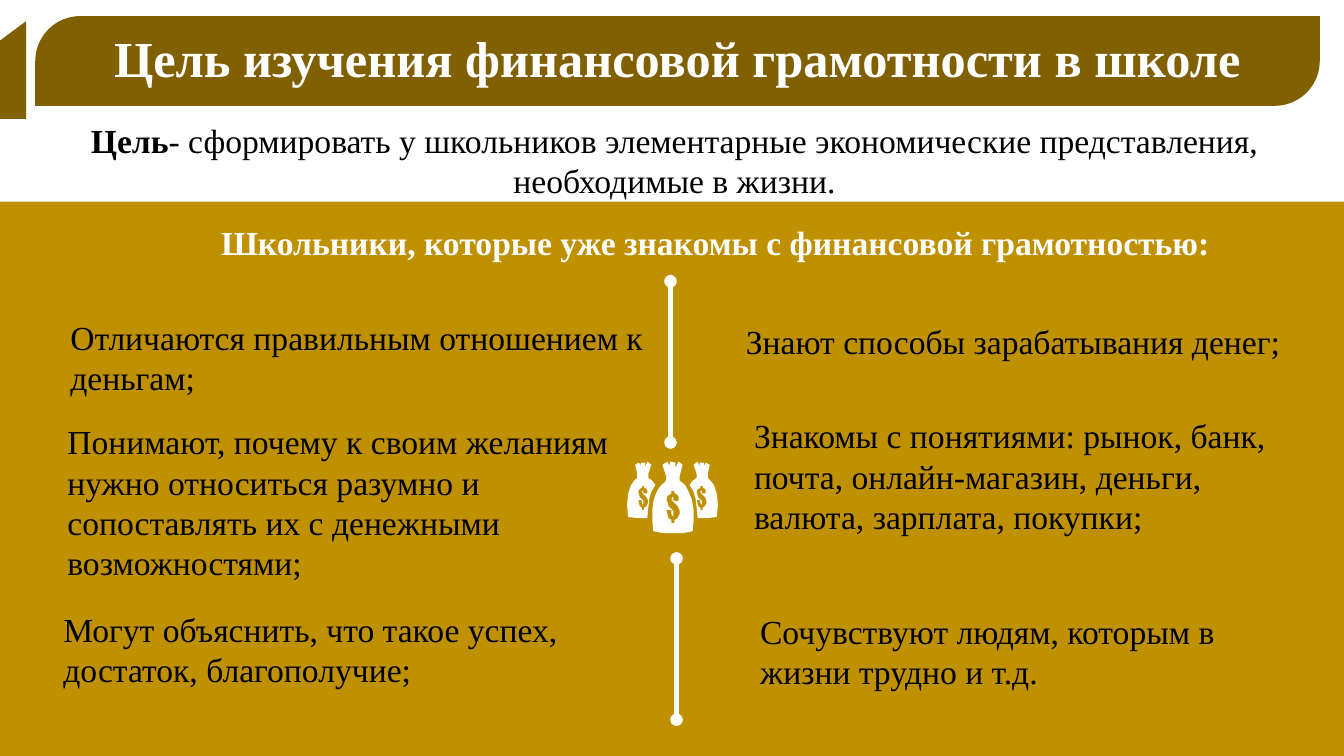
from lxml import etree
from pptx import Presentation
from pptx.dml.color import RGBColor
from pptx.enum.shapes import MSO_CONNECTOR as CONNECTOR, MSO_SHAPE as SHAPE
from pptx.enum.text import MSO_ANCHOR as ANCHOR, PP_ALIGN as ALIGN
from pptx.oxml.ns import qn
from pptx.util import Inches, Pt

BROWN = RGBColor(0x80, 0x60, 0x00)
GOLD = RGBColor(0xBF, 0x90, 0x00)
WHITE = RGBColor(0xFF, 0xFF, 0xFF)
BLACK = RGBColor(0x00, 0x00, 0x00)

prs = Presentation()
prs.slide_width, prs.slide_height = Inches(13.33), Inches(7.5)
slide = prs.slides.add_slide(prs.slide_layouts[6])
shapes = slide.shapes


def paint(shape, color):
    shape.shadow.inherit = False
    shape.fill.solid()
    shape.fill.fore_color.rgb = color
    shape.line.fill.background()


def write(frame, runs, align, color=BLACK, size=24):
    """Fill the frame with one paragraph of (text, bold) runs."""
    frame.word_wrap = True
    paragraph = frame.paragraphs[0]
    paragraph.alignment = align
    for text, bold in runs:
        run = paragraph.add_run()
        run.text = text
        run.font.color.rgb = color
        formats = {"name": "Times New Roman", "size": Pt(size), "bold": bold}
        for key, value in formats.items():
            setattr(run.font, key, value)


# Title bar, lower panel and corner tab
bands = []
for kind, box, color in [
    (SHAPE.ROUND_2_DIAG_RECTANGLE, (0.35, 0.16, 12.74, 0.89), BROWN),
    (SHAPE.RECTANGLE, (0, 2, 13.33, 5.5), GOLD),
    (SHAPE.FLOWCHART_MANUAL_INPUT, (0, 0.21, 0.26, 0.97), BROWN),
]:
    band = shapes.add_shape(kind, *map(Inches, box))
    paint(band, color)
    bands.append(band)

title = bands[0]
title.adjustments[0] = 0.5
title.adjustments[1] = 0
title.text_frame.vertical_anchor = ANCHOR.MIDDLE
write(title.text_frame, [("Цель изучения финансовой грамотности в школе", True)],
      ALIGN.CENTER, WHITE, 36)
title.text_frame.paragraphs[0].line_spacing = 0.9

# Goal, subheading and the two columns of statements
for box, runs, align, color in [
    ((0.38, 1.14, 12.62, 0.91),
     [("Цель", True),
      ("- сформировать у школьников элементарные экономические представления, "
       "необходимые в жизни.", False)], ALIGN.CENTER, BLACK),
    ((1.46, 2.15, 11.27, 0.91),
     [("Школьники, которые уже знакомы с финансовой грамотностью:", True)],
     ALIGN.CENTER, WHITE),
    ((0.6, 3.09, 5.94, 1.25),
     [("Отличаются правильным отношением к деньгам;", False)], ALIGN.LEFT, BLACK),
    ((0.57, 4.13, 6.07, 1.72),
     [("Понимают, почему к своим желаниям нужно относиться разумно и "
       "сопоставлять их с денежными возможностями;", False)], ALIGN.LEFT, BLACK),
    ((0.53, 5.99, 6.04, 1.25),
     [("Могут объяснить, что такое успех, достаток, благополучие;", False)],
     ALIGN.LEFT, BLACK),
    ((7.3, 3.13, 5.87, 0.5),
     [("Знают способы зарабатывания денег;", False)], ALIGN.LEFT, BLACK),
    ((7.38, 4.07, 5.68, 1.72),
     [("Знакомы с понятиями: рынок, банк, почта, онлайн-магазин, деньги, "
       "валюта, зарплата, покупки;", False)], ALIGN.LEFT, BLACK),
    ((7.44, 6.01, 5.61, 1.25),
     [("Сочувствуют людям, которым в жизни трудно и т.д.", False)],
     ALIGN.LEFT, BLACK),
]:
    write(shapes.add_textbox(*map(Inches, box)).text_frame, runs, align, color)

# Divider above and below the money bags
for x, top in [(6.65, 2.79), (6.71, 5.54)]:
    divider = shapes.add_connector(
        CONNECTOR.STRAIGHT, Inches(x), Inches(top), Inches(x), Inches(top + 1.6))
    divider.line.color.rgb = WHITE
    divider.line.width = Pt(3)
    for end in ("a:headEnd", "a:tailEnd"):
        etree.SubElement(divider.line._get_or_add_ln(), qn(end), type="oval")
    etree.SubElement(divider._element.spPr, qn("a:effectLst"))

# Money bags: side bags mirror each other, one dollar sign serves all three
left_bag = [
    (6.43, 4.74), (6.47, 4.77), (6.5, 4.81), (6.46, 4.88), (6.44, 4.95),
    (6.43, 5.04), (6.42, 5.14), (6.33, 5.14), (6.23, 5.13), (6.22, 5.01),
    (6.23, 4.9), (6.26, 4.81), (6.29, 4.77), (6.32, 4.74), (6.32, 4.7),
    (6.3, 4.61), (6.34, 4.59), (6.35, 4.62), (6.36, 4.59), (6.4, 4.59),
    (6.4, 4.63), (6.42, 4.58), (6.46, 4.61), (6.43, 4.7),
]
right_bag = [(13.34 - x, y) for x, y in left_bag]
front_bag = [
    (6.74, 4.77), (6.74, 4.73), (6.77, 4.61), (6.73, 4.58), (6.7, 4.64),
    (6.7, 4.59), (6.65, 4.58), (6.64, 4.62), (6.62, 4.58), (6.57, 4.61),
    (6.61, 4.73), (6.6, 4.78), (6.56, 4.81), (6.53, 4.85), (6.5, 4.91),
    (6.48, 4.98), (6.47, 5.06), (6.47, 5.16), (6.48, 5.27), (6.58, 5.29),
    (6.68, 5.29), (6.77, 5.29), (6.87, 5.27), (6.88, 5.16), (6.88, 5.06),
    (6.86, 4.95), (6.83, 4.88), (6.8, 4.82), (6.77, 4.79),
]
dollar = [
    (0.12, 0.1), (0.07, 0.1), (0.07, 0.07), (0.06, 0.06), (0.05, 0.08),
    (0.06, 0.1), (0.09, 0.13), (0.11, 0.15), (0.13, 0.19), (0.13, 0.23),
    (0.11, 0.27), (0.08, 0.29), (0.08, 0.32), (0.05, 0.32), (0.05, 0.29),
    (0.02, 0.27), (0.01, 0.23), (0, 0.19), (0.05, 0.19), (0.05, 0.23),
    (0.06, 0.25), (0.07, 0.24), (0.07, 0.2), (0.05, 0.18), (0.02, 0.15),
    (0.01, 0.11), (0, 0.09), (0.01, 0.05), (0.04, 0.03), (0.05, 0.02),
    (0.05, 0), (0.08, 0), (0.08, 0.02), (0.11, 0.04), (0.12, 0.06),
]
outlines = [left_bag, right_bag, front_bag]
for left, top, scale in [(6.33, 4.82, 0.75), (6.91, 4.82, 0.75), (6.61, 4.87, 1)]:
    outlines.append([(left + x * scale, top + y * scale) for x, y in dollar])

money_bags = None
for outline in outlines:
    start, *rest = [(Inches(x), Inches(y)) for x, y in outline]
    if money_bags is None:
        money_bags = shapes.build_freeform(*start)
    else:
        money_bags.move_to(*start)
    money_bags.add_line_segments(rest, close=True)
paint(money_bags.convert_to_shape(), WHITE)

prs.save("out.pptx")
